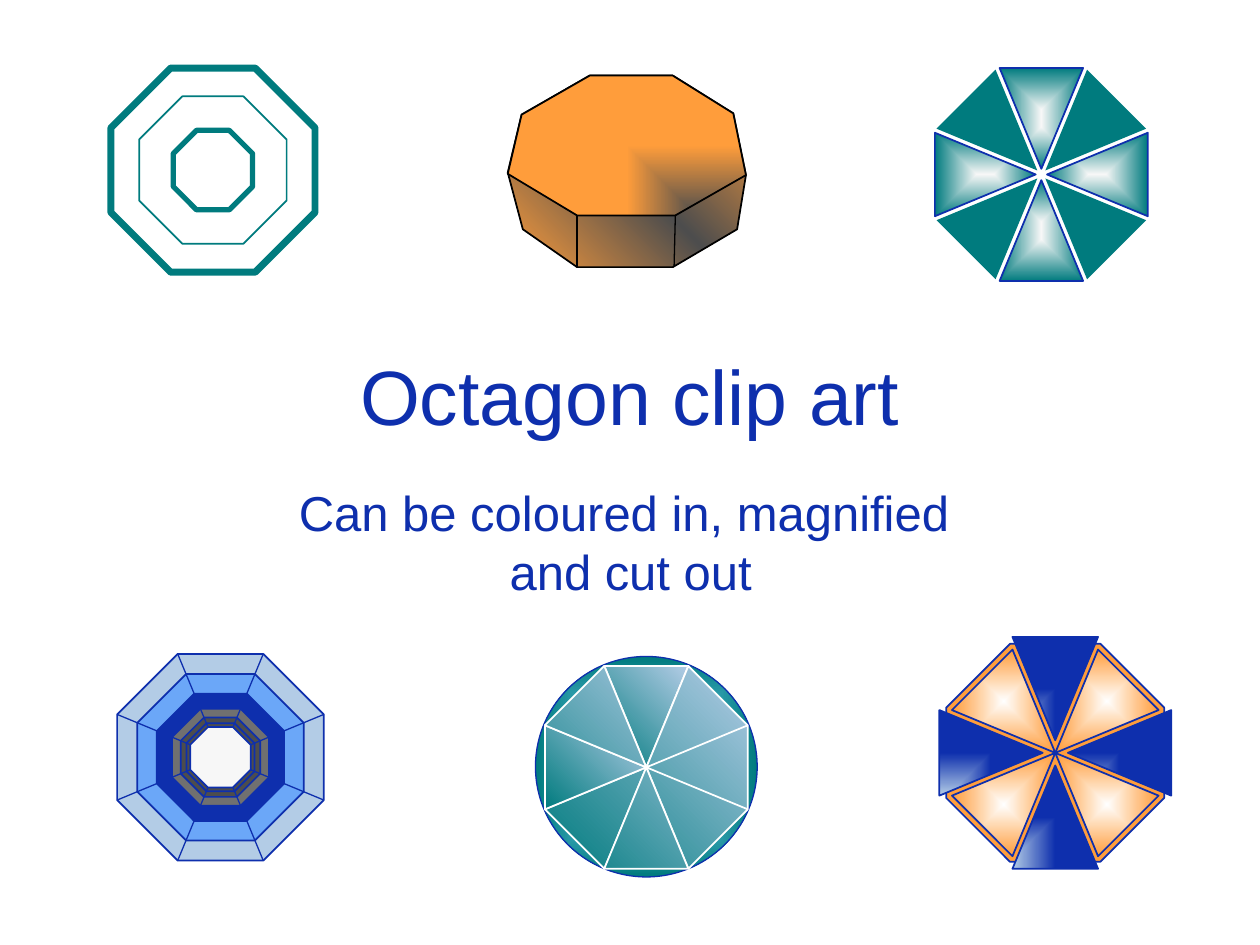
from math import cos, pi, sin

from lxml import etree
from pptx import Presentation
from pptx.dml.color import RGBColor
from pptx.enum.shapes import MSO_CONNECTOR, MSO_SHAPE
from pptx.enum.text import MSO_ANCHOR, PP_ALIGN
from pptx.oxml.ns import qn
from pptx.util import Inches, Pt

STRAIGHT = MSO_CONNECTOR.STRAIGHT
OVAL = MSO_SHAPE.OVAL
MIDDLE, TOP = MSO_ANCHOR.MIDDLE, MSO_ANCHOR.TOP
CENTER = PP_ALIGN.CENTER

BLUE, TEAL, ORANGE, PALE = "0E2FAD", "007B7E", "FF9D3B", "B3CCE6"
GREY, BLACK, WHITE, MIST = "4D4D4D", "000000", "FFFFFF", "F7F7F7"
FROM_CENTER = (50, 50, 50, 50)
FROM_BOTTOM_LEFT = (0, 100, 100, 0)
FROM_BOTTOM_RIGHT = (100, 100, 0, 0)


def rgb(value):
    return RGBColor.from_string(value)


def gradient(colors, angle=None, focus=None, path="rect"):
    return {"colors": colors, "angle": angle, "focus": focus, "shade": path}


def apply_gradient(shape, style):
    shape.fill.gradient()
    grad = shape._element.spPr.find(qn("a:gradFill"))
    for child in list(grad):
        grad.remove(child)
    stops = etree.SubElement(grad, qn("a:gsLst"))
    step = 100000 // (len(style["colors"]) - 1)
    for index, color in enumerate(style["colors"]):
        stop = etree.SubElement(stops, qn("a:gs"), pos=str(index * step))
        etree.SubElement(stop, qn("a:srgbClr"), val=color)
    if style["focus"] is None:
        etree.SubElement(grad, qn("a:lin"), ang=str(style["angle"] * 60000), scaled="0")
    else:
        shade = etree.SubElement(grad, qn("a:path"), path=style["shade"])
        sides = {side: str(share * 1000) for side, share in zip("ltrb", style["focus"])}
        etree.SubElement(shade, qn("a:fillToRect"), **sides)


def paint(shape, fill, line, weight):
    shape.shadow.inherit = False
    if fill is None:
        shape.fill.background()
    elif isinstance(fill, dict):
        apply_gradient(shape, fill)
    else:
        shape.fill.solid()
        shape.fill.fore_color.rgb = rgb(fill)
    if line is None:
        shape.line.fill.background()
    else:
        shape.line.color.rgb = rgb(line)
        shape.line.width = Pt(weight)


def add_polygon(shapes, points, fill=None, line=None, weight=1):
    corners = [(Inches(x), Inches(y)) for x, y in points]
    builder = shapes.build_freeform(*corners[0], scale=1.0)
    builder.add_line_segments(corners[1:], close=True)
    paint(builder.convert_to_shape(), fill, line, weight)


def add_edge(shapes, start, end, color):
    edge = shapes.add_connector(STRAIGHT, *(Inches(v) for v in (*start, *end)))
    edge.line.color.rgb = rgb(color)
    edge.line.width = Pt(0.75)
    etree.SubElement(edge._element.spPr, qn("a:effectLst"))


def octagon(center, width):
    radius = width / 2 / cos(pi / 8)
    angles = [(2 * k - 5) * pi / 8 for k in range(8)]
    return [(center[0] + radius * cos(a), center[1] + radius * sin(a)) for a in angles]


def wedge(center, reach, k, gap):
    direction = (k - 2) * pi / 4
    apex = (center[0] + gap * cos(direction), center[1] + gap * sin(direction))
    corners = octagon(apex, 2 * reach)
    return [apex, corners[k], corners[(k + 1) % 8]]


def add_text(slide, box, text, size, anchor, space_before=0):
    frame = slide.shapes.add_textbox(*(Inches(v) for v in box)).text_frame
    frame.word_wrap = True
    frame.vertical_anchor = anchor
    paragraph = frame.paragraphs[0]
    paragraph.text = text
    paragraph.alignment = CENTER
    paragraph.space_before = Pt(space_before)
    paragraph.font.name = "Arial"
    paragraph.font.size = Pt(size)
    paragraph.font.color.rgb = rgb(BLUE)


def draw_outlines(shapes):
    for width, weight in ((1.62, 4), (1.17, 1), (0.63, 3)):
        add_polygon(shapes, octagon((1.69, 1.35), width), None, TEAL, weight)


def draw_prism(shapes):
    back = [(4.14, 0.91), (4.68, 0.6), (5.34, 0.6), (5.82, 0.9), (5.92, 1.39)]
    body = [(4.15, 1.82), (4.03, 1.37), *back, (5.85, 1.82), (5.34, 2.12), (4.58, 2.12)]
    lid = [(4.03, 1.38), *back, (5.36, 1.71), (4.58, 1.71)]
    add_polygon(shapes, body, gradient([ORANGE, GREY, ORANGE], angle=315), BLACK)
    add_polygon(shapes, lid, gradient([GREY, ORANGE], focus=FROM_BOTTOM_RIGHT), BLACK)
    add_edge(shapes, (4.58, 1.71), (4.58, 2.12), BLACK)
    add_edge(shapes, (5.36, 1.71), (5.35, 2.11), BLACK)


def draw_split_wheel(shapes):
    glow = gradient([MIST, TEAL], focus=FROM_CENTER)
    for k in range(8):
        fill, line = (TEAL, None) if k % 2 else (glow, BLUE)
        add_polygon(shapes, wedge((8.265, 1.385), 0.8, k, 0.045), fill, line)


def draw_rings(shapes):
    center, outer, inner = (1.75, 6.01), 1.64, 0.48
    rings = ((outer, PALE), (1.32, "6BA7F8"), (1.01, BLUE), (0.77, "707070"),
             (0.63, GREY), (0.54, None), (inner, MIST))
    for width, fill in rings:
        add_polygon(shapes, octagon(center, width), fill, BLUE)
    for start, end in zip(octagon(center, inner), octagon(center, outer)):
        add_edge(shapes, start, end, BLUE)


def draw_disc(shapes):
    disc = shapes.add_shape(OVAL, Inches(4.25), Inches(5.21), Inches(1.76), Inches(1.75))
    rim = gradient(["7FD7FC", TEAL], focus=FROM_CENTER, path="shape")
    paint(disc, rim, BLUE, 0.75)
    sheen = gradient([TEAL, PALE], angle=315)
    for sectors in ((0,), (1, 2, 3, 5), (6,), (7, 4)):
        points = [point for k in sectors for point in wedge((5.13, 6.09), 0.805, k, 0)]
        add_polygon(shapes, points, sheen, WHITE)


def draw_cross_wheel(shapes):
    center = (8.375, 5.975)
    add_polygon(shapes, octagon(center, 1.73), ORANGE, BLUE)
    blade = gradient([PALE, BLUE], focus=FROM_BOTTOM_LEFT)
    pane = gradient([WHITE, ORANGE], focus=FROM_CENTER)
    for k in range(8):
        fill, gap = (pane, 0) if k % 2 else (blade, 0.1)
        add_polygon(shapes, wedge(center, 0.82, k, gap), fill, BLUE)


def main():
    deck = Presentation()
    deck.slide_width, deck.slide_height = Inches(10), Inches(7.5)
    slide = deck.slides.add_slide(deck.slide_layouts[6])
    add_text(slide, (0.75, 2.33, 8.5, 1.61), "Octagon clip art", 44, MIDDLE)
    add_text(slide, (0.9, 3.78, 8.21, 1.92),
             "Can be coloured in, magnified \vand cut out", 28, TOP, 5.6)
    for draw in (draw_rings, draw_split_wheel, draw_prism,
                 draw_outlines, draw_disc, draw_cross_wheel):
        draw(slide.shapes.add_group_shape().shapes)
    deck.save("out.pptx")


if __name__ == "__main__":
    main()
